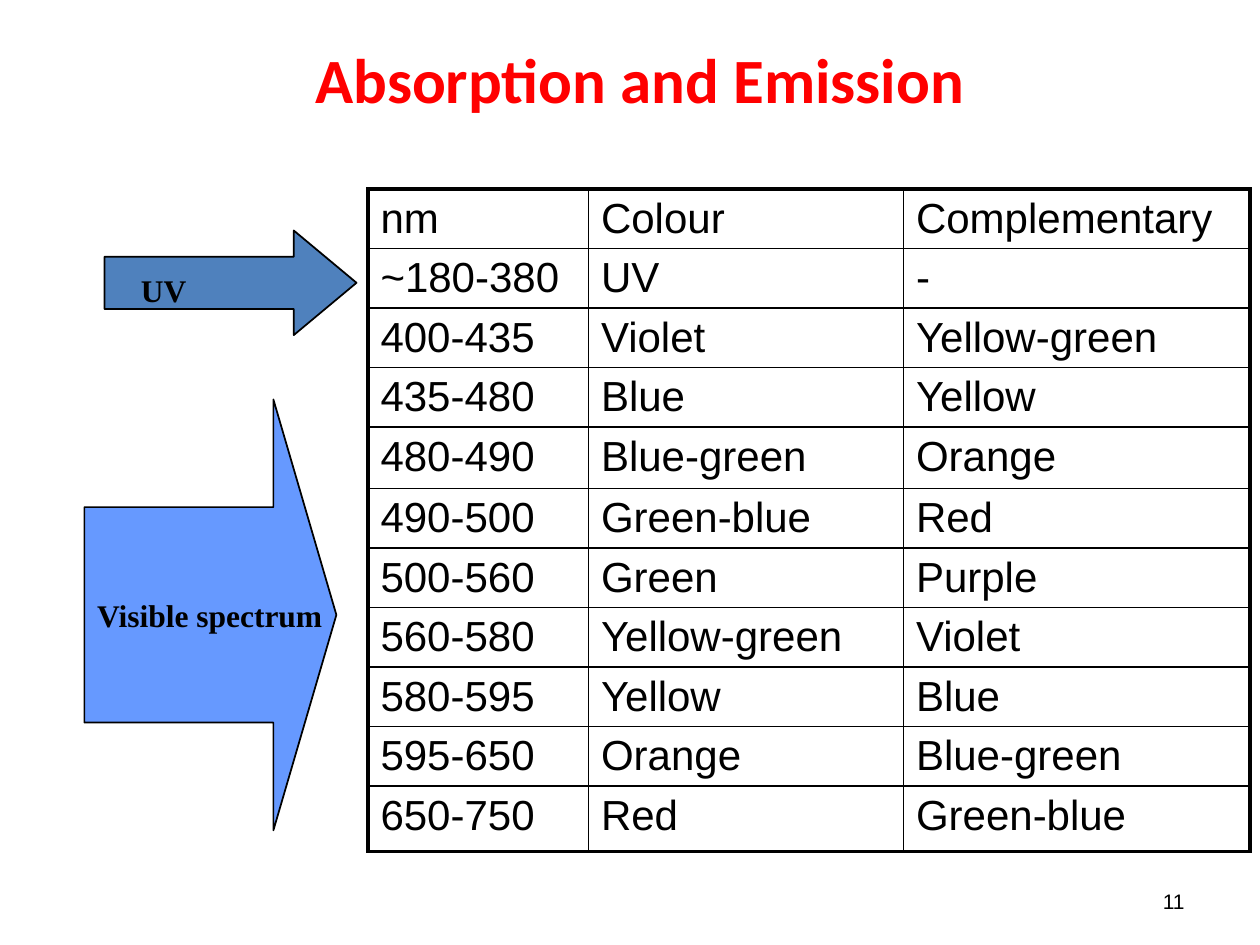
from dataclasses import dataclass

from lxml.etree import SubElement
from pptx import Presentation
from pptx.dml.color import RGBColor
from pptx.enum.shapes import MSO_SHAPE
from pptx.enum.text import MSO_ANCHOR, PP_ALIGN
from pptx.oxml.ns import qn
from pptx.util import Emu, Pt

PX = 9144


@dataclass(frozen=True)
class Theme:
    """Colours, fonts, type sizes and line widths of the deck."""
    black: str = "000000"
    red: str = "FF0000"
    steel: str = "4F81BD"
    sky: str = "6699FF"
    heading: str = "Calibri"
    body: str = "Arial"
    label: str = "Times New Roman"
    title_size: int = 36
    table_size: int = 24
    label_size: int = 18
    number_size: int = 12
    thin: float = 1
    thick: float = 2.25


THEME = Theme()
COLUMNS = (175, 250, 275)
ROWS = (46, 45, 45, 46, 49, 45, 46, 45, 46, 45, 52)
SPECTRUM = (
    ("nm", "Colour", "Complementary"),
    ("~180-380", "UV", "-"),
    ("400-435", "Violet", "Yellow-green"),
    ("435-480", "Blue", "Yellow"),
    ("480-490", "Blue-green", "Orange"),
    ("490-500", "Green-blue", "Red"),
    ("500-560", "Green", "Purple"),
    ("560-580", "Yellow-green", "Violet"),
    ("580-595", "Yellow", "Blue"),
    ("595-650", "Orange", "Blue-green"),
    ("650-750", "Red", "Green-blue"),
)


def px(length):
    """Turn px into EMU."""
    return Emu(length * PX)


def place(box):
    """Turn a px box into EMU lengths."""
    return [px(length) for length in box]


def write(frame, text, font, size, color=THEME.black, bold=False, align=PP_ALIGN.LEFT):
    """Write one run into the first paragraph of a frame."""
    para = frame.paragraphs[0]
    para.alignment = align
    span = para.add_run()
    span.text = text
    span.font.name = font
    span.font.size = Pt(size)
    span.font.bold = bold
    span.font.color.rgb = RGBColor.from_string(color)


def add_title(page, box, text):
    """Place and format the title placeholder."""
    title = page.shapes.title
    title.left, title.top, title.width, title.height = place(box)
    title.text_frame.vertical_anchor = MSO_ANCHOR.MIDDLE
    write(title.text_frame, text, THEME.heading, THEME.title_size, THEME.red, True, PP_ALIGN.CENTER)


def set_border(cell, side, width):
    """Draw one black border of a cell."""
    line = SubElement(cell._tc.get_or_add_tcPr(), qn(f"a:{side}"), w=str(Pt(width)))
    fill = SubElement(line, qn("a:solidFill"))
    SubElement(fill, qn("a:srgbClr"), val=THEME.black)


def add_spectrum_table(page, box):
    """Add the wavelength table with a thick outer frame."""
    table = page.shapes.add_table(len(ROWS), len(COLUMNS), *place(box)).table
    table.first_row = table.horz_banding = False
    for column, width in zip(table.columns, COLUMNS):
        column.width = px(width)
    for r, (row, height, texts) in enumerate(zip(table.rows, ROWS, SPECTRUM)):
        row.height = px(height)
        for c, (cell, text) in enumerate(zip(row.cells, texts)):
            outer = {
                "lnL": c == 0,
                "lnR": c == len(COLUMNS) - 1,
                "lnT": r == 0,
                "lnB": r == len(ROWS) - 1,
            }
            for side, is_outer in outer.items():
                set_border(cell, side, THEME.thick if is_outer else THEME.thin)
            cell.fill.background()
            write(cell.text_frame, text, THEME.body, THEME.table_size)


def add_arrow(page, box, color, head):
    """Add a right block arrow with the given head ratio."""
    arrow = page.shapes.add_shape(MSO_SHAPE.RIGHT_ARROW, *place(box))
    arrow.adjustments[0] = 0.5
    arrow.adjustments[1] = head
    arrow.shadow.inherit = False
    arrow.fill.solid()
    arrow.fill.fore_color.rgb = RGBColor.from_string(color)
    arrow.line.color.rgb = RGBColor.from_string(THEME.black)
    arrow.line.width = Pt(THEME.thin)
    return arrow


def add_visible_arrow(page, box):
    """Add the visible spectrum arrow with its label inside."""
    frame = add_arrow(page, box, THEME.sky, 0.25).text_frame
    frame.word_wrap = False
    frame.vertical_anchor = MSO_ANCHOR.MIDDLE
    frame.margin_left, frame.margin_right = px(24), px(0)
    write(frame, "Visible spectrum", THEME.label, THEME.label_size, bold=True, align=PP_ALIGN.CENTER)


def add_uv_arrow(page, box):
    """Add the UV arrow and the label over its shaft."""
    left, top, _, _ = box
    add_arrow(page, box, THEME.steel, 0.6)
    frame = page.shapes.add_textbox(*place((left + 19, top + 24, 64, 40))).text_frame
    frame.word_wrap = True
    frame.margin_top = px(8)
    write(frame, "UV", THEME.label, THEME.label_size, bold=True)


def add_page_number(page, box, number):
    """Add the page number at the lower right."""
    frame = page.shapes.add_textbox(*place(box)).text_frame
    frame.word_wrap = True
    frame.vertical_anchor = MSO_ANCHOR.MIDDLE
    write(frame, number, THEME.body, THEME.number_size, align=PP_ALIGN.RIGHT)


def main():
    """Build and save the deck."""
    deck = Presentation()
    deck.slide_width, deck.slide_height = place((1000, 750))
    page = deck.slides.add_slide(deck.slide_layouts[5])
    add_title(page, (58, 0, 900, 125), "Absorption and Emission")
    add_spectrum_table(page, (292, 150, sum(COLUMNS), sum(ROWS)))
    add_page_number(page, (717, 695, 233, 40), "11")
    add_visible_arrow(page, (67, 317, 200, 342))
    add_uv_arrow(page, (83, 183, 200, 83))
    deck.save("out.pptx")


if __name__ == "__main__":
    main()
